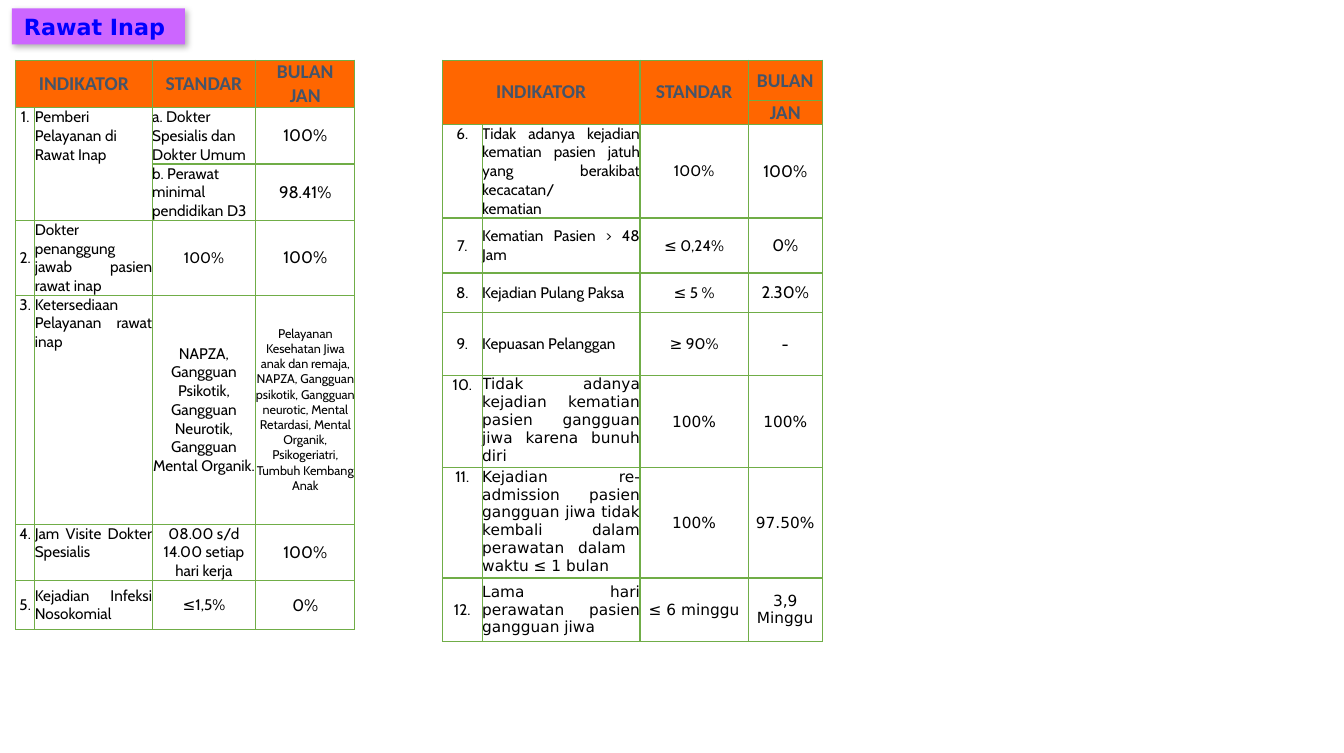
from lxml import etree
from pptx import Presentation
from pptx.dml.color import RGBColor
from pptx.enum import text as t
from pptx.oxml import parse_xml
from pptx.oxml.ns import nsdecls, qn
from pptx.util import Pt

COLORS = {"title_fill": "CC66FF", "title": "0000FF", "header_fill": "FF6600",
          "header": "44546A", "body": "000000", "border": "70AD47",
          "shadow": "000000"}
HEADING, BODY, WIDE = "Calibri", "Cabin", "DejaVu Sans"
TITLE = "Rawat Inap "
HEADERS = ("INDIKATOR", "STANDAR", "BULAN", "JAN")

# Each row: number, indicator, standard, value; None continues the cell above
INPATIENT = [
    {"left": 11.2, "top": 43.2, "month_rule": False,
     "columns": (13.8, 84.2, 74.3, 71),
     "heights": (16.8, 16.8, 39.4, 39.4, 53, 164.2, 39.4, 35.2),
     "rows": [
         ("1.", "Pemberi Pelayanan di Rawat Inap",
          "a. Dokter Spesialis dan Dokter Umum", "100%"),
         (None, None, "b. Perawat minimal pendidikan D3", "98.41%"),
         ("2.", "Dokter penanggung jawab pasien rawat inap", "100%", "100%"),
         ("3.", "Ketersediaan Pelayanan rawat inap ",
          "NAPZA, Gangguan Psikotik, Gangguan Neurotik, Gangguan Mental Organik.",
          "Pelayanan Kesehatan Jiwa anak dan remaja, NAPZA, Gangguan psikotik, "
          "Gangguan neurotic, Mental Retardasi, Mental Organik, Psikogeriatri, "
          "Tumbuh Kembang Anak"),
         ("4.", "Jam Visite Dokter Spesialis ",
          "08.00 s/d 14.00 setiap hari kerja", "100%"),
         ("5.", "Kejadian Infeksi Nosokomial", "≤1,5%", "0%")]},
    {"left": 317.3, "top": 43.2, "month_rule": True,
     "columns": (28.6, 113.2, 77.6, 53.2),
     "heights": (28.8, 16.6, 67.2, 39.5, 28.3, 45.3, 66.2, 79, 45.5),
     "rows": [
         ("6.", "Tidak adanya kejadian kematian pasien jatuh yang berakibat "
          "kecacatan/\nkematian", "100%", "100%"),
         ("7.", "Kematian Pasien > 48 Jam", "≤ 0,24%", "0%"),
         ("8.", "Kejadian Pulang Paksa", "≤ 5 %", "2.30%"),
         ("9.", "Kepuasan Pelanggan", "≥ 90%", "-"),
         ("10.", "Tidak adanya kejadian kematian pasien gangguan jiwa karena "
          "bunuh diri", "100%", "100%"),
         ("11.", "Kejadian re-admission pasien gangguan jiwa tidak kembali "
          "dalam perawatan dalam  waktu ≤ 1 bulan", "100%", "97.50%"),
         ("12.", "Lama hari perawatan pasien gangguan jiwa ",
          "≤ 6 minggu", "3,9 Minggu")]},
]
TOP_ANCHORED = {"1.", "3.", "4.", "6.", "10.", "11."}
WIDE_ROWS = {"10.", "11.", "12."}
LEFT, CENTER, JUSTIFY = (t.PP_ALIGN.LEFT, t.PP_ALIGN.CENTER, t.PP_ALIGN.JUSTIFY)


def color(name):
    return RGBColor.from_string(COLORS[name])


def add_text(paragraph, words, align, font, size, tint, bold):
    paragraph.alignment = align
    run = paragraph.add_run()
    run.text = words
    run.font.name, run.font.size, run.font.bold = font, Pt(size), bold
    run.font.color.rgb = color(tint)


def set_borders(cell, hidden=""):
    props = cell._tc.get_or_add_tcPr()
    for side in "LRTB":
        line = etree.SubElement(props, qn(f"a:ln{side}"), w=str(Pt(1)))
        if side == hidden:
            etree.SubElement(line, qn("a:noFill"))
        else:
            fill = etree.SubElement(line, qn("a:solidFill"))
            etree.SubElement(fill, qn("a:srgbClr"), val=COLORS["border"])


def fill_cell(cell, words, align=CENTER, font=BODY, size=11, tint="body",
              bold=False, top=False):
    cell.margin_left = cell.margin_right = cell.margin_top = cell.margin_bottom = 0
    cell.vertical_anchor = t.MSO_ANCHOR.TOP if top else t.MSO_ANCHOR.MIDDLE
    frame = cell.text_frame
    for i, part in enumerate(words.split("\n")):
        paragraph = frame.add_paragraph() if i else frame.paragraphs[0]
        add_text(paragraph, part, align, font, size, tint, bold)


def add_indicators(slide, data):
    widths, heights, rows = data["columns"], data["heights"], data["rows"]
    grid = slide.shapes.add_table(
        len(heights), len(widths), Pt(data["left"]), Pt(data["top"]),
        Pt(sum(widths)), Pt(sum(heights))).table
    grid.first_row = grid.horz_banding = False
    for column, width in zip(grid.columns, widths):
        column.width = Pt(width)
    for row, height in zip(grid.rows, heights):
        row.height = Pt(height)

    # Borders and fills
    for r in range(len(heights)):
        for c in range(len(widths)):
            cell = grid.cell(r, c)
            open_side = c == 3 and r < 2 and not data["month_rule"]
            set_borders(cell, "BT"[r] if open_side else "")
            if r < 2:
                cell.fill.solid()
                cell.fill.fore_color.rgb = color("header_fill")
            else:
                cell.fill.background()

    # Header
    grid.cell(0, 0).merge(grid.cell(1, 1))
    grid.cell(0, 2).merge(grid.cell(1, 2))
    for (r, c), words in zip(((0, 0), (0, 2), (0, 3), (1, 3)), HEADERS):
        fill_cell(grid.cell(r, c), words, font=HEADING, size=14,
                  tint="header", bold=True)

    # Indicators
    for r, (number, indicator, standard, value) in enumerate(rows, 2):
        wide = number in WIDE_ROWS
        font = WIDE if wide else BODY
        if number is None:
            for c in (0, 1):
                grid.cell(r - 1, c).merge(grid.cell(r, c))
        else:
            top = number in TOP_ANCHORED
            fill_cell(grid.cell(r, 0), number, top=top)
            fill_cell(grid.cell(r, 1), indicator, LEFT if number == "1." else JUSTIFY,
                      font, top=top)
        lettered = standard[:2] in ("a.", "b.")
        fill_cell(grid.cell(r, 2), standard, LEFT if lettered else CENTER, font)
        size = 9 if len(value) > 20 else 11 if wide else 12
        fill_cell(grid.cell(r, 3), value, font=font, size=size)


def add_title(slide):
    title = slide.shapes.title
    title.left, title.top, title.width, title.height = Pt(8.6), Pt(6), Pt(124), Pt(25.8)
    title.fill.solid()
    title.fill.fore_color.rgb = color("title_fill")
    frame = title.text_frame
    frame.word_wrap = False
    frame.auto_size = t.MSO_AUTO_SIZE.NONE
    frame.vertical_anchor = t.MSO_ANCHOR.TOP
    frame.margin_left = frame.margin_right = Pt(7.2)
    frame.margin_top = frame.margin_bottom = Pt(3.6)
    add_text(frame.paragraphs[0], TITLE, CENTER, WIDE, 16, "title", True)
    title._element.spPr.append(parse_xml(
        f'<a:effectLst {nsdecls("a")}><a:outerShdw blurRad="{Pt(4.5)}" '
        f'dist="{Pt(2.6)}" dir="{53 * 60000}" algn="tl" rotWithShape="0">'
        f'<a:srgbClr val="{COLORS["shadow"]}"><a:alpha val="30000"/></a:srgbClr>'
        '</a:outerShdw></a:effectLst>'))


def main():
    deck = Presentation()
    deck.slide_width, deck.slide_height = Pt(964), Pt(540)
    slide = deck.slides.add_slide(deck.slide_layouts[5])
    add_title(slide)
    for data in INPATIENT:
        add_indicators(slide, data)
    deck.save("out.pptx")


if __name__ == "__main__":
    main()
